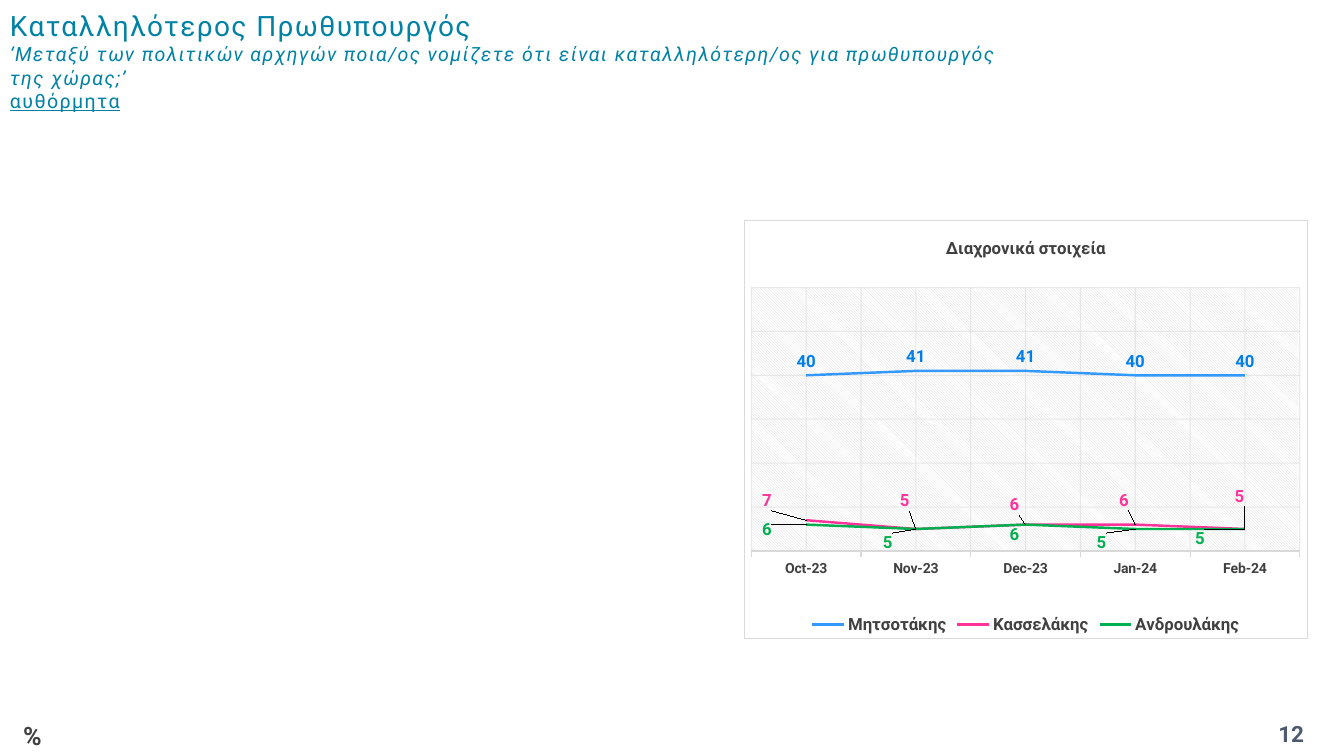
"""Build the slide on the most suitable prime minister, with its trend chart."""
from copy import deepcopy

from lxml import etree
from pptx import Presentation
from pptx import util as u
from pptx.chart.data import CategoryChartData
from pptx.dml.color import RGBColor
from pptx.enum import chart as ch, dml, text
from pptx.oxml.ns import qn

NS = ('xmlns:a="http://schemas.openxmlformats.org/drawingml/2006/main" '
      'xmlns:c="http://schemas.openxmlformats.org/drawingml/2006/chart"')
LINE = '<a:ln w="9525"><a:solidFill><a:srgbClr val="D9D9D9"/></a:solidFill></a:ln>'


def xml(tag, body):
    return etree.fromstring(f'<c:{tag} {NS}>{body}</c:{tag}>')


def style(font, size, color, bold=False):
    font.name, font.size, font.bold = "Roboto", u.Pt(size), bold
    font.fill.solid()
    font.fill.fore_color.rgb = RGBColor.from_string(color)


prs = Presentation()
prs.slide_width, prs.slide_height = u.Inches(13.33), u.Inches(7.5)
s = prs.slides.add_slide(prs.slide_layouts[6])

boxes = []
for left, top, width, height, words in [
    (0, 0.01, 12.88, 1.18,
     "Καταλληλότερος Πρωθυπουργός\v"
     "‘Μεταξύ των πολιτικών αρχηγών ποια/ος νομίζετε ότι είναι καταλληλότερη/ος για πρωθυπουργός \v"
     "της χώρας;’ \vαυθόρμητα"),
    (12.28, 7.1, 1.05, 0.4, "12"),
    (0.13, 7.1, 0.71, 0.4, "%"),
]:
    tf = s.shapes.add_textbox(*map(u.Inches, (left, top, width, height))).text_frame
    tf.word_wrap = True
    p = tf.paragraphs[0]
    p.text = words
    boxes.append(p)
title, number, percent = boxes

s.shapes[0].text_frame.vertical_anchor = text.MSO_ANCHOR.MIDDLE
for r, size, italic, underline in zip(title.runs, (20, 14, 14, 14),
                                      (False, True, True, False),
                                      (False, False, False, True)):
    style(r.font, size, "0082A5")
    r.font.italic, r.font.underline = italic, underline
    r.font._element.set("spc", "100")
for br in title._p.findall(qn("a:br")):
    br.append(deepcopy(br.getprevious().find(qn("a:rPr"))))

number.alignment = text.PP_ALIGN.CENTER
style(number.runs[0].font, 16, "4E5B6F", True)
font = percent.runs[0].font
style(font, 18, "404040", True)
font.fill.patterned()
font.fill.pattern = dml.MSO_PATTERN.DARK_UPWARD_DIAGONAL
font.fill.fore_color.rgb = RGBColor.from_string("808080")
font.fill.back_color.rgb = RGBColor.from_string("404040")

leaders = [
    ("Μητσοτάκης", (40, 41, 41, 40, 40), "3399FF", "007EEB", []),
    ("Κασσελάκης", (7, 5, 6, 6, 5), "FF3399", "FF3399",
     [(-0.07, -0.08), (-0.02, -0.1), (-0.02, -0.08), (-0.02, -0.09), (-0.01, -0.11)]),
    ("Ανδρουλάκης", (6, 5, 6, 5, 5), "00B050", "00B050",
     [(-0.07, -0.02), (-0.05, 0), (-0.02, -0.01), (-0.06, 0), (-0.08, -0.01)]),
]
data = CategoryChartData(number_format="0")
data.categories = ["Oct-23", "Nov-23", "Dec-23", "Jan-24", "Feb-24"]
for name, values, *_ in leaders:
    data.add_series(name, values)
chart = s.shapes.add_chart(ch.XL_CHART_TYPE.LINE, u.Inches(7.38), u.Inches(2.18),
                           u.Inches(5.59), u.Inches(4.16), data).chart
style(chart.font, 10, "000000")

chart.has_title = True
chart.chart_title.include_in_layout = False
p = chart.chart_title.text_frame.paragraphs[0]
p.text = "Διαχρονικά στοιχεία"
style(p.runs[0].font, 12, "404040", True)

chart.has_legend = True
chart.legend.position = ch.XL_LEGEND_POSITION.BOTTOM
chart.legend.include_in_layout = False
style(chart.legend.font, 12, "404040", True)

months, share = chart.category_axis, chart.value_axis
style(months.tick_labels.font, 10, "404040", True)
months.major_tick_mark = ch.XL_TICK_MARK.OUTSIDE
months.has_minor_gridlines = True
share.visible = False
share.minimum_scale, share.maximum_scale, share.major_unit = 0, 60, 10
for axis in (months, share):
    axis.has_major_gridlines = True
    axis.format.line.width = u.Pt(0.75)
    axis.format.line.color.rgb = RGBColor.from_string("D9D9D9")
    for tag in ("c:majorGridlines", "c:minorGridlines"):
        for grid in axis._element.findall(qn(tag)):
            faint = LINE.replace('"/>', '"><a:alpha val="54000"/></a:srgbClr>')
            grid.append(xml("spPr", faint))

for series, (_, _, color, label_color, offsets) in zip(chart.plots[0].series, leaders):
    series.smooth = False
    series.format.line.width = u.Pt(1.75)
    series.format.line.color.rgb = RGBColor.from_string(color)
    position = ch.XL_LABEL_POSITION.BELOW if offsets else ch.XL_LABEL_POSITION.ABOVE
    labels = series.data_labels
    labels.show_value = True
    labels.position = position
    style(labels.font, 12, label_color, True)
    for i, (dx, dy) in enumerate(offsets):
        label = series.points[i].data_label
        style(label.font, 12, label_color, True)
        label.position = position
        idx = labels._element.findall(qn("c:dLbl"))[i].find(qn("c:idx"))
        idx.addnext(xml("layout", f'<c:manualLayout><c:x val="{dx}"/><c:y val="{dy}"/></c:manualLayout>'))

plot = chart._chartSpace.chart.plotArea
for layout in plot.findall(qn("c:layout")):
    plot.remove(layout)
plot.insert(0, xml("layout", '<c:manualLayout><c:layoutTarget val="inner"/>'
                   '<c:xMode val="edge"/><c:yMode val="edge"/><c:x val="0.012"/><c:y val="0.161"/>'
                   '<c:w val="0.975"/><c:h val="0.63"/></c:manualLayout>'))
plot.append(xml("spPr", '<a:pattFill prst="ltDnDiag"><a:fgClr><a:srgbClr val="D9D9D9"/></a:fgClr>'
                '<a:bgClr><a:srgbClr val="FFFFFF"/></a:bgClr></a:pattFill><a:ln><a:noFill/></a:ln>'))
chart._chartSpace.chart.addnext(
    xml("spPr", '<a:solidFill><a:srgbClr val="FFFFFF"/></a:solidFill>' + LINE))

prs.save("out.pptx")
